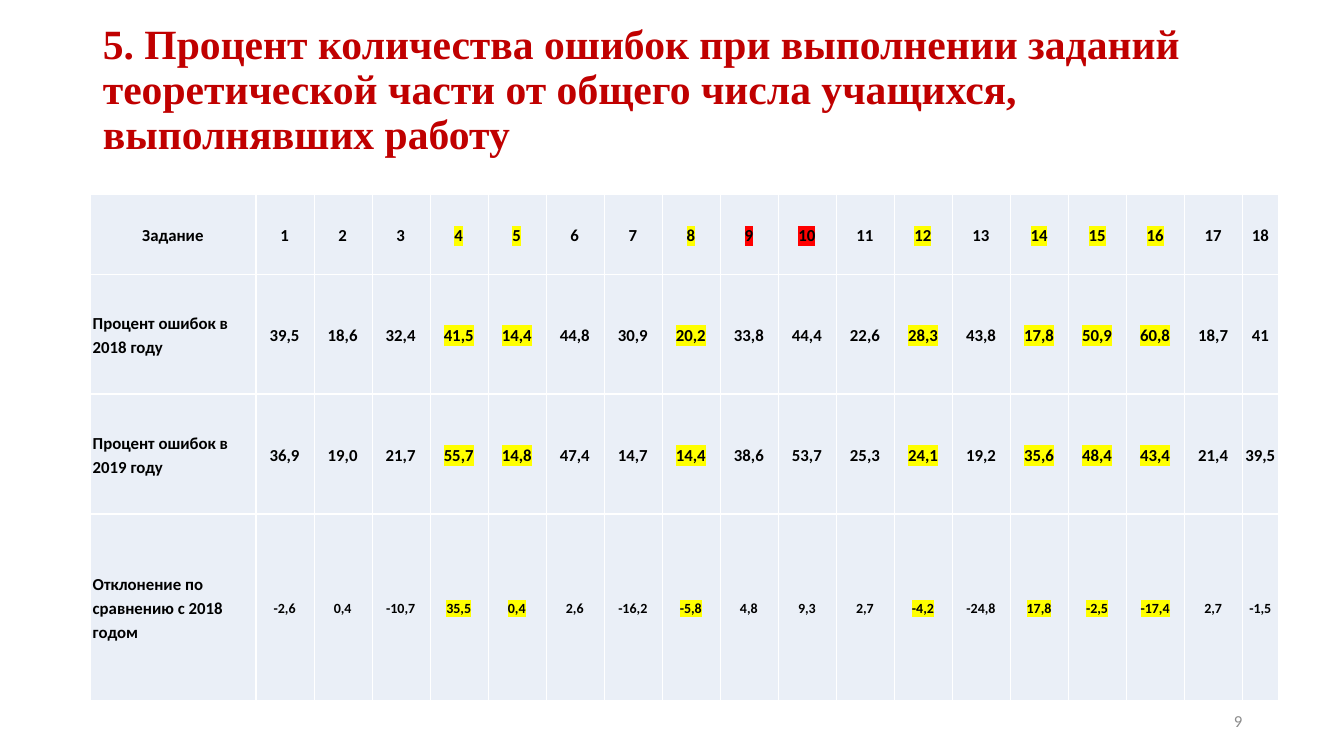
from lxml import etree
from pptx import Presentation
from pptx.dml.color import RGBColor
from pptx.enum.text import MSO_ANCHOR, MSO_AUTO_SIZE, PP_ALIGN
from pptx.oxml.ns import qn
from pptx.util import Inches, Pt

MIDDLE = MSO_ANCHOR.MIDDLE
NO_FIT = MSO_AUTO_SIZE.NONE
LEFT, CENTER, RIGHT = PP_ALIGN.LEFT, PP_ALIGN.CENTER, PP_ALIGN.RIGHT

RED = RGBColor(0xC0, 0x00, 0x00)
BLACK = RGBColor(0x00, 0x00, 0x00)
GRAY = RGBColor(0x8C, 0x8C, 0x8C)
WHITE = RGBColor(0xFF, 0xFF, 0xFF)
PALE = RGBColor(0xEA, 0xEF, 0xF7)
YELLOW = RGBColor(0xFF, 0xFF, 0x00)
ALERT = RGBColor(0xFF, 0x00, 0x00)

WIDE, HIGH = 13.33, 7.5
TITLE_BOX = (0.92, 0.4, 11.5, 1.45)
TABLE_BOX = (0.9, 1.93, 11.79, 5.02)
PAGE_BOX = (9.42, 6.95, 3, 0.4)
LABEL_W, LAST_W = 1.64, 0.36
ROW_H = (0.79, 1.19, 1.19, 1.85)

TITLE = ("5. Процент количества ошибок при выполнении заданий теоретической "
         "части от общего числа учащихся, выполнявших работу")
TASKS = range(1, 19)
ROWS = [
    ["Задание", *map(str, TASKS)],
    ["Процент ошибок в 2018 году",
     *"39,5 18,6 32,4 41,5 14,4 44,8 30,9 20,2 33,8 44,4 22,6 28,3 43,8 "
      "17,8 50,9 60,8 18,7 41".split()],
    ["Процент ошибок в 2019 году",
     *"36,9 19,0 21,7 55,7 14,8 47,4 14,7 14,4 38,6 53,7 25,3 24,1 19,2 "
      "35,6 48,4 43,4 21,4 39,5".split()],
    ["Отклонение по сравнению с 2018 годом",
     *"-2,6 0,4 -10,7 35,5 0,4 2,6 -16,2 -5,8 4,8 9,3 2,7 -4,2 -24,8 "
      "17,8 -2,5 -17,4 2,7 -1,5".split()],
]
MARKED = {4, 5, 8, 12, 14, 15, 16}
ALARM = {9, 10}


def assign(item, values):
    for name, value in values.items():
        setattr(item, name, value)


def place(shape, box):
    names = ("left", "top", "width", "height")
    assign(shape, dict(zip(names, map(Inches, box))))


def write(frame, text, look, color, align, space=1.0):
    para = frame.paragraphs[0]
    assign(para, {"alignment": align, "line_spacing": space})
    run = para.add_run()
    run.text = text
    assign(run.font, look)
    run.font.color.rgb = color
    return run


def mark(run, color):
    """Highlight a run; the tag must follow the text fill."""
    light = etree.Element(qn("a:highlight"))
    etree.SubElement(light, qn("a:srgbClr"), val=str(color))
    run.font._element.find(qn("a:solidFill")).addnext(light)


def edge(cell):
    """Put a thin white line on all four sides, ahead of the cell fill."""
    props = cell._tc.get_or_add_tcPr()
    for spot, side in enumerate(("lnL", "lnR", "lnT", "lnB")):
        line = etree.Element(qn(f"a:{side}"), w=str(Pt(1)))
        fill = etree.SubElement(line, qn("a:solidFill"))
        etree.SubElement(fill, qn("a:srgbClr"), val=str(WHITE))
        props.insert(spot, line)


def add_title(slide, box):
    title = slide.shapes.title
    place(title, box)
    frame = title.text_frame
    assign(frame, {"word_wrap": True, "auto_size": NO_FIT,
                   "vertical_anchor": MIDDLE, "margin_bottom": Inches(0.5)})
    look = {"name": "Times New Roman", "size": Pt(29.7), "bold": True}
    write(frame, TITLE, look, RED, LEFT, 0.9)


def tint(row, col):
    if col in MARKED:
        return YELLOW
    return ALERT if row == 0 and col in ALARM else None


def fill_cell(cell, row, col):
    cell.fill.solid()
    cell.fill.fore_color.rgb = PALE
    edge(cell)
    assign(cell, {"vertical_anchor": MIDDLE, "margin_left": Inches(0.02),
                  "margin_right": Inches(0.03), "margin_top": 0,
                  "margin_bottom": 0})
    small = row == len(ROWS) - 1 and col > 0
    look = {"name": "Calibri", "size": Pt(10 if small else 12), "bold": True}
    align = LEFT if row and not col else CENTER
    run = write(cell.text_frame, ROWS[row][col], look, BLACK, align, 1.15)
    color = tint(row, col)
    if color:
        mark(run, color)


def add_grid(slide, box):
    count = len(ROWS[0])
    table = slide.shapes.add_table(len(ROWS), count, *map(Inches, box)).table
    step = (box[2] - LABEL_W - LAST_W) / (count - 2)
    widths = [LABEL_W, *[step] * (count - 2), LAST_W]
    for column, width in zip(table.columns, widths):
        column.width = Inches(width)
    for line, height in zip(table.rows, ROW_H):
        line.height = Inches(height)
    for row in range(len(ROWS)):
        for col in range(count):
            fill_cell(table.cell(row, col), row, col)


def add_page(slide, box):
    frame = slide.shapes.add_textbox(*map(Inches, box)).text_frame
    assign(frame, {"word_wrap": True, "vertical_anchor": MIDDLE})
    write(frame, "9", {"name": "Calibri", "size": Pt(12)}, GRAY, RIGHT)


def main():
    deck = Presentation()
    assign(deck, {"slide_width": Inches(WIDE), "slide_height": Inches(HIGH)})
    slide = deck.slides.add_slide(deck.slide_layouts[5])
    add_title(slide, TITLE_BOX)
    add_grid(slide, TABLE_BOX)
    add_page(slide, PAGE_BOX)
    deck.save("out.pptx")


if __name__ == "__main__":
    main()
